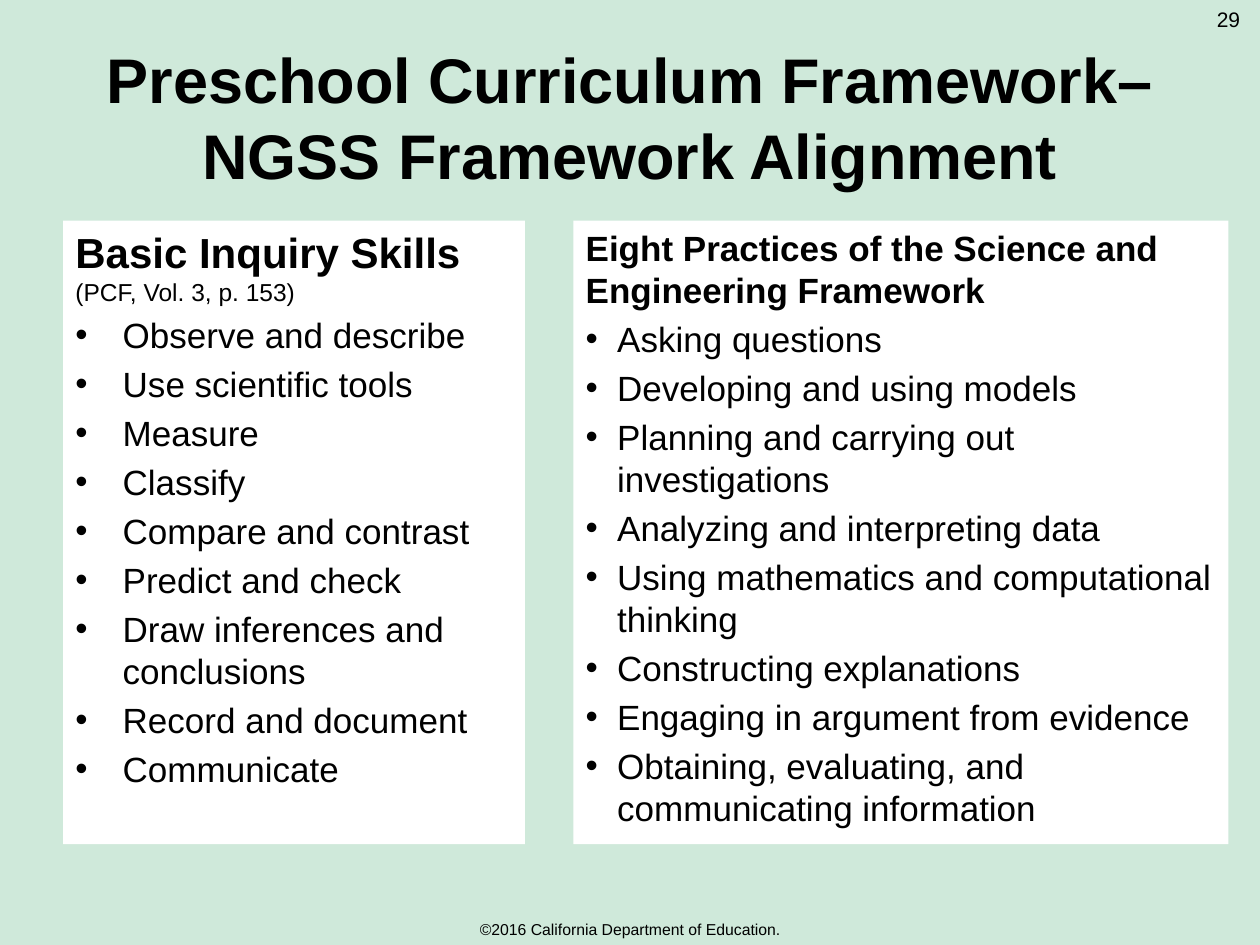
from pptx import Presentation
from pptx.dml.color import RGBColor
from pptx.enum.shapes import MSO_SHAPE
from pptx.enum.text import MSO_ANCHOR, PP_ALIGN
from pptx.oxml.ns import qn
from pptx.util import Pt
from lxml.etree import SubElement

COLORS = {"background": "CFE9DA", "panel": "FFFFFF", "text": "000000"}
FONT = "Arial"

TITLE = "Preschool Curriculum Framework–NGSS Framework Alignment"
PAGE_NUMBER = "29"
COPYRIGHT = "©2016 California Department of Education."

PANELS = [
    {
        "left": 36, "width": 264, "indent": 27,
        "heading": "Basic Inquiry Skills", "heading_size": 24,
        "source": "(PCF, Vol. 3, p. 153)",
        "items": [
            "Observe and describe", "Use scientific tools", "Measure", "Classify",
            "Compare and contrast", "Predict and check",
            "Draw inferences and conclusions", "Record and document", "Communicate",
        ],
    },
    {
        "left": 327.6, "width": 374.4, "indent": 18,
        "heading": "Eight Practices of the Science and Engineering Framework",
        "heading_size": 20,
        "source": None,
        "items": [
            "Asking questions", "Developing and using models",
            "Planning and carrying out investigations",
            "Analyzing and interpreting data",
            "Using mathematics and computational thinking",
            "Constructing explanations", "Engaging in argument from evidence",
            "Obtaining, evaluating, and communicating information",
        ],
    },
]
PANEL_TOP, PANEL_HEIGHT = 126, 356.4
ITEM_SIZE, SOURCE_SIZE, ITEM_GAP = 20, 14, 4


def color(name):
    return RGBColor.from_string(COLORS[name])


def style(font, size, bold=False):
    font.name, font.size, font.bold = FONT, Pt(size), bold
    font.color.rgb = color("text")


def add_line(slide, text, box, size, anchor):
    frame = slide.shapes.add_textbox(*map(Pt, box)).text_frame
    frame.word_wrap = True
    frame.vertical_anchor = anchor
    line = frame.paragraphs[0]
    line.text, line.alignment = text, PP_ALIGN.CENTER
    style(line.font, size)


def add_bullet(paragraph, indent):
    properties = paragraph._p.get_or_add_pPr()
    properties.set("marL", str(Pt(indent)))
    properties.set("indent", str(-Pt(indent)))
    SubElement(properties, qn("a:buFont"), typeface=FONT)
    SubElement(properties, qn("a:buChar"), char="•")


def add_panel(slide, panel):
    box = (panel["left"], PANEL_TOP, panel["width"], PANEL_HEIGHT)
    card = slide.shapes.add_shape(MSO_SHAPE.RECTANGLE, *map(Pt, box))
    card.shadow.inherit = False
    card.fill.solid()
    card.fill.fore_color.rgb = color("panel")
    card.line.fill.background()
    frame = card.text_frame
    frame.word_wrap = True
    frame.vertical_anchor = MSO_ANCHOR.TOP

    heading = frame.paragraphs[0]
    heading.alignment = PP_ALIGN.LEFT
    heading_run = heading.add_run()
    heading_run.text = panel["heading"]
    style(heading_run.font, panel["heading_size"], True)
    if panel["source"]:
        heading.add_line_break()
        source_run = heading.add_run()
        source_run.text = panel["source"]
        style(source_run.font, SOURCE_SIZE)

    for item in panel["items"]:
        entry = frame.add_paragraph()
        entry.text, entry.alignment = item, PP_ALIGN.LEFT
        entry.space_before = Pt(ITEM_GAP)
        add_bullet(entry, panel["indent"])
        style(entry.font, ITEM_SIZE)


def main():
    """Build the framework alignment slide."""
    deck = Presentation()
    deck.slide_width, deck.slide_height = Pt(720), Pt(540)
    slide = deck.slides.add_slide(deck.slide_layouts[5])
    slide.background.fill.solid()
    slide.background.fill.fore_color.rgb = color("background")

    title = slide.shapes.title
    title.left, title.top, title.width, title.height = map(Pt, (36, 21.6, 648, 90))
    title.text_frame.text = TITLE
    title.text_frame.vertical_anchor = MSO_ANCHOR.MIDDLE
    title_line = title.text_frame.paragraphs[0]
    title_line.alignment = PP_ALIGN.CENTER
    style(title_line.font, 36, True)

    for panel in PANELS:
        add_panel(slide, panel)
    add_line(slide, COPYRIGHT, (29.5, 522, 661, 18), 9, MSO_ANCHOR.MIDDLE)
    add_line(slide, PAGE_NUMBER, (684, 0, 36, 28.8), 12, MSO_ANCHOR.TOP)
    deck.save("out.pptx")


if __name__ == "__main__":
    main()
